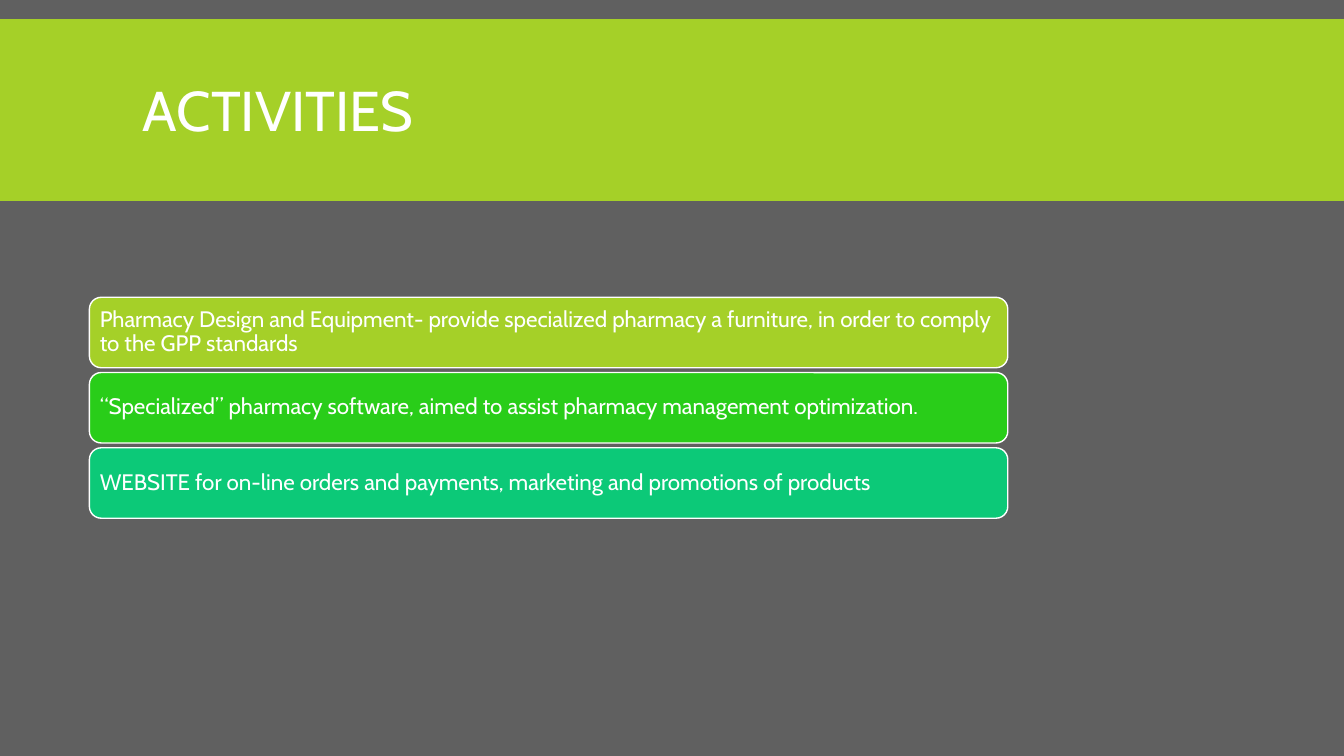
from pptx import Presentation
from pptx.dml.color import RGBColor
from pptx.enum.shapes import MSO_SHAPE
from pptx.enum.text import MSO_ANCHOR, PP_ALIGN
from pptx.util import Pt

COLORS = {
    "background": "606060",
    "lime": "A5D028",
    "green": "29CD19",
    "teal": "0CC978",
    "white": "FFFFFF",
}
ACTIVITIES = [
    ("Pharmacy Design and Equipment- provide specialized pharmacy a furniture, "
     "in order to comply to the GPP standards", "lime"),
    ("“Specialized” pharmacy software, aimed to assist pharmacy management optimization.", "green"),
    ("WEBSITE for on-line orders and payments, marketing and promotions of products", "teal"),
]
FIRST_BAR_TOP = 212.4
BAR_PITCH = 53.75


def color(name):
    """Return the named colour."""
    return RGBColor.from_string(COLORS[name])


def set_text(shape, text, size, line_spacing):
    """Write one white, left-aligned, vertically centred paragraph."""
    frame = shape.text_frame
    frame.text = text
    frame.word_wrap = True
    frame.vertical_anchor = MSO_ANCHOR.MIDDLE
    paragraph = frame.paragraphs[0]
    paragraph.alignment = PP_ALIGN.LEFT
    paragraph.line_spacing = line_spacing
    font = paragraph.runs[0].font
    font.name = "Cabin"
    font.size = Pt(size)
    font.color.rgb = color("white")


def add_block(slide, kind, left, top, width, height, fill):
    """Add a filled shape without shadow or outline."""
    shape = slide.shapes.add_shape(kind, Pt(left), Pt(top), Pt(width), Pt(height))
    shape.shadow.inherit = False
    shape.fill.solid()
    shape.fill.fore_color.rgb = color(fill)
    shape.line.fill.background()
    return shape


def add_title(slide, text):
    """Add the title over its full-width band."""
    add_block(slide, MSO_SHAPE.RECTANGLE, 0, 13.7, 960, 129.8, "lime")
    title = slide.shapes.add_textbox(Pt(95), Pt(22.3), Pt(770.4), Pt(118.8))
    set_text(title, text, 40, 0.85)


def add_activity(slide, top, text, fill):
    """Add one rounded, outlined activity bar."""
    bar = add_block(slide, MSO_SHAPE.ROUNDED_RECTANGLE, 63.9, top, 656, 50.3, fill)
    bar.line.color.rgb = color("white")
    bar.line.width = Pt(1)
    set_text(bar, text, 16, 0.9)
    frame = bar.text_frame
    frame.margin_left = frame.margin_right = Pt(5)
    frame.margin_top = frame.margin_bottom = Pt(5)


def main():
    """Build and save the slide."""
    presentation = Presentation()
    presentation.slide_width, presentation.slide_height = Pt(960), Pt(540)
    slide = presentation.slides.add_slide(presentation.slide_layouts[6])
    slide.background.fill.solid()
    slide.background.fill.fore_color.rgb = color("background")
    add_title(slide, "ACTIVITIES")
    for index, (text, fill) in enumerate(ACTIVITIES):
        add_activity(slide, FIRST_BAR_TOP + index * BAR_PITCH, text, fill)
    presentation.save("out.pptx")


if __name__ == "__main__":
    main()
